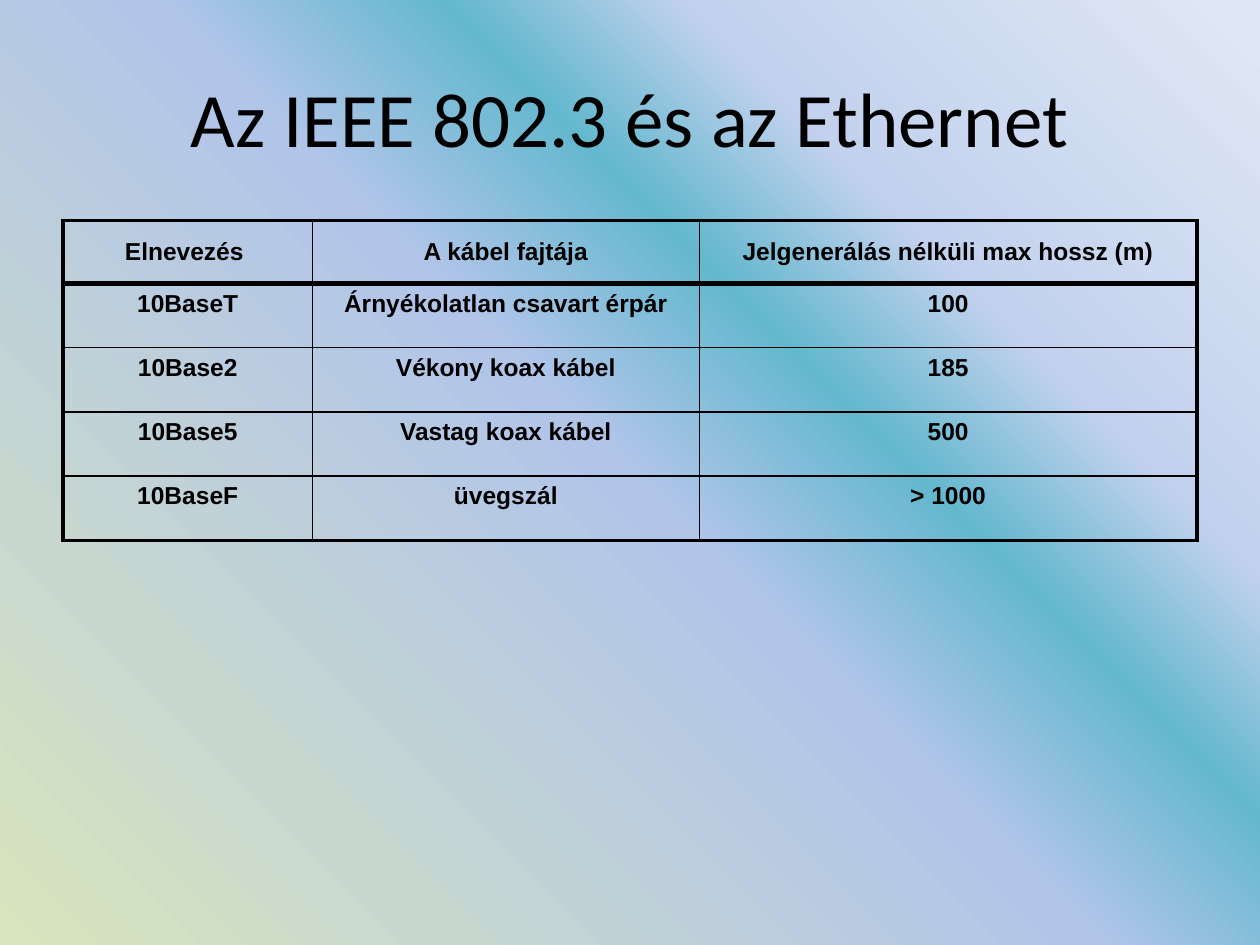
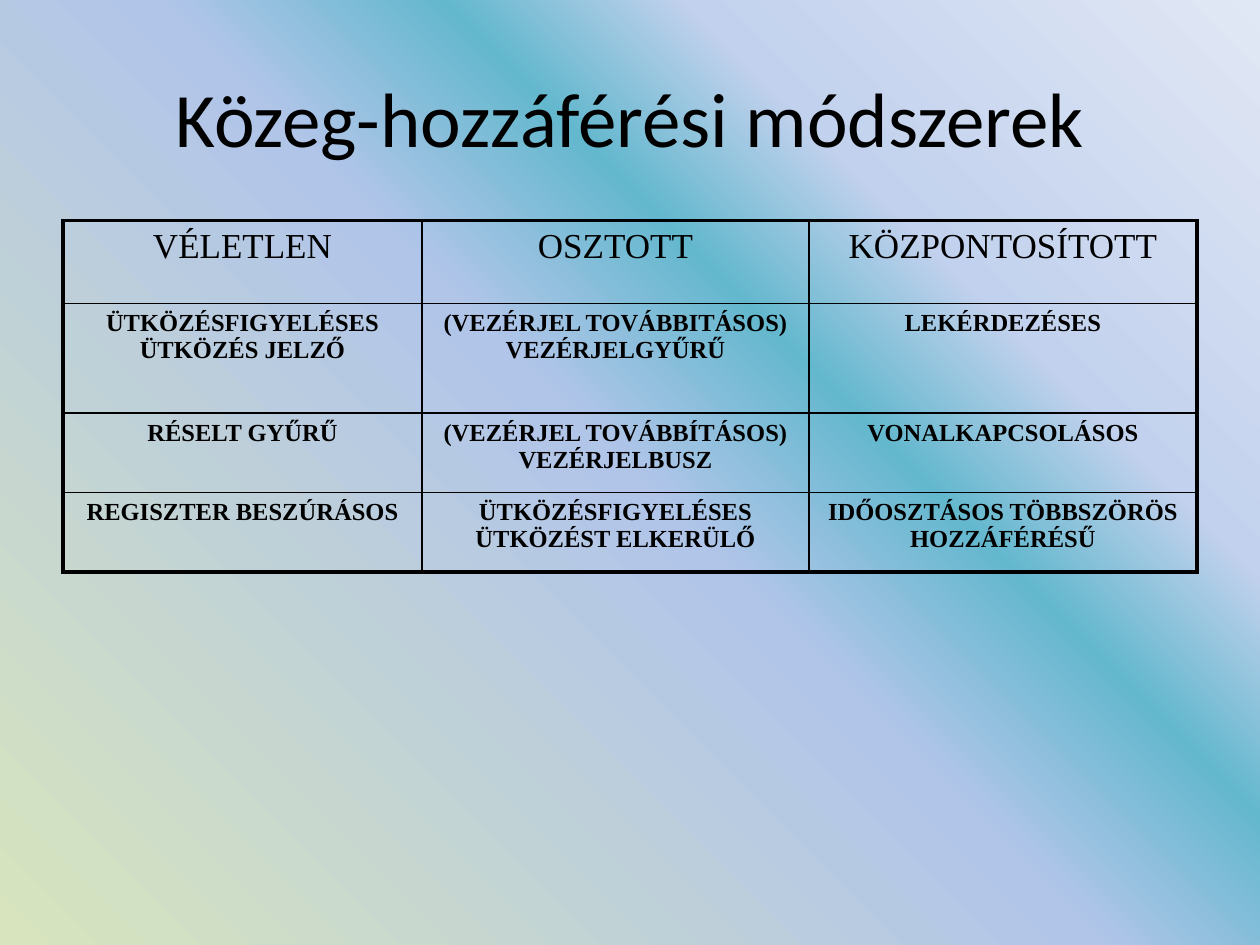
"""Builds two slides with tables on Ethernet cabling and media access methods."""
from lxml import etree
from pptx import Presentation
from pptx import util as u
from pptx.dml.color import RGBColor
from pptx.enum import text
from pptx.oxml import ns, parse_xml

COLORS = {
    "ink": "000000",
    "brick": "953735",
    "lime": "D7E4BD",
    "periwinkle": "B1C5E9",
    "teal": "64B8CE",
    "mist": "C2D1ED",
    "pale": "E1E8F5",
}
GRADIENT_STOPS = [
    (0, "brick", 100), (0, "lime", 100), (50, "periwinkle", 100),
    (63, "teal", 38), (74, "mist", 100), (100, "pale", 100),
]
TITLE_FONT = "Calibri"
THIN, THICK, HEADER_RULE = 1, 2.25, 3

CABLE_ROWS = [
    ["Elnevezés ", "A kábel fajtája", "Jelgenerálás nélküli max hossz (m)"],
    ["10BaseT", "Árnyékolatlan csavart érpár", "100"],
    ["10Base2", "Vékony koax kábel", "185"],
    ["10Base5", "Vastag koax kábel", "500"],
    ["10BaseF", "üvegszál", "> 1000"],
]
ACCESS_ROWS = [
    ["VÉLETLEN", "OSZTOTT", "KÖZPONTOSÍTOTT"],
    ["ÜTKÖZÉSFIGYELÉSES ÜTKÖZÉS JELZŐ",
     "(VEZÉRJEL TOVÁBBITÁSOS) VEZÉRJELGYŰRŰ", "LEKÉRDEZÉSES"],
    ["RÉSELT GYŰRŰ",
     "(VEZÉRJEL TOVÁBBÍTÁSOS) VEZÉRJELBUSZ", "VONALKAPCSOLÁSOS"],
    ["REGISZTER BESZÚRÁSOS",
     "ÜTKÖZÉSFIGYELÉSES ÜTKÖZÉST ELKERÜLŐ",
     "IDŐOSZTÁSOS TÖBBSZÖRÖS HOZZÁFÉRÉSŰ"],
]


def paint_background(master):
    """Give the master a gradient that spreads from the bottom left corner."""
    master.background.fill.solid()
    properties = master.element.find(".//" + ns.qn("p:bgPr"))
    stops = "".join(
        f'<a:gs pos="{position * 1000}"><a:srgbClr val="{COLORS[name]}">'
        f'<a:alpha val="{opacity * 1000}"/></a:srgbClr></a:gs>'
        for position, name, opacity in GRADIENT_STOPS)
    gradient = parse_xml(
        f'<a:gradFill {ns.nsdecls("a")} rotWithShape="1"><a:gsLst>{stops}</a:gsLst>'
        '<a:path path="circle"><a:fillToRect t="100000" r="100000"/></a:path>'
        '</a:gradFill>')
    properties.replace(properties.find(ns.qn("a:solidFill")), gradient)


def format_text(frame, font, size, bold=False):
    """Centre the paragraphs of a frame and style their runs."""
    for para in frame.paragraphs:
        para.alignment = text.PP_ALIGN.CENTER
        for span in para.runs:
            span.font.name = font
            span.font.size = u.Pt(size)
            span.font.bold = bold
            span.font.color.rgb = RGBColor.from_string(COLORS["ink"])


def add_titled_slide(deck, title):
    """Add a title-only slide and return it."""
    page = deck.slides.add_slide(deck.slide_layouts[5])
    box = page.shapes.title
    box.left, box.top = u.Inches(0.5), u.Inches(0.3)
    box.width, box.height = u.Inches(9), u.Inches(1.25)
    box.text_frame.text = title
    box.text_frame.vertical_anchor = text.MSO_ANCHOR.MIDDLE
    format_text(box.text_frame, TITLE_FONT, 44)
    return page


def set_borders(cell, widths):
    """Draw the left, right, top and bottom borders at widths in points."""
    properties = cell._tc.get_or_add_tcPr()
    for index, (side, width) in enumerate(zip("LRTB", widths)):
        line = etree.Element(ns.qn(f"a:ln{side}"), w=str(u.Pt(width)))
        fill = etree.SubElement(line, ns.qn("a:solidFill"))
        etree.SubElement(fill, ns.qn("a:srgbClr"), val=COLORS["ink"])
        properties.insert(index, line)


def add_framed_table(page, rows, column_widths, row_heights, font,
                     header_size, header_bold, header_anchor, header_rule):
    """Add a see-through table with a thick frame and thin inner lines."""
    table = page.shapes.add_table(
        len(rows), len(column_widths), u.Inches(0.5), u.Inches(1.75),
        u.Inches(sum(column_widths)), u.Inches(sum(row_heights))).table
    table.first_row = table.horz_banding = False
    for column, width in zip(table.columns, column_widths):
        column.width = u.Inches(width)
    for row, height in zip(table.rows, row_heights):
        row.height = u.Inches(height)

    column_lines = [THICK] + [THIN] * (len(column_widths) - 1) + [THICK]
    row_lines = [THICK, header_rule] + [THIN] * (len(rows) - 2) + [THICK]
    for r, labels in enumerate(rows):
        for c, label in enumerate(labels):
            cell = table.cell(r, c)
            cell.text_frame.text = label
            cell.fill.background()
            set_borders(cell, column_lines[c:c + 2] + row_lines[r:r + 2])
            if r == 0:
                cell.vertical_anchor = header_anchor
                format_text(cell.text_frame, font, header_size, header_bold)
            else:
                cell.vertical_anchor = text.MSO_ANCHOR.TOP
                format_text(cell.text_frame, font, 14, True)


def main():
    """Build and save the deck."""
    deck = Presentation()
    deck.slide_width, deck.slide_height = u.Inches(10), u.Inches(7.5)
    paint_background(deck.slide_master)

    page = add_titled_slide(deck, "Az IEEE 802.3 és az Ethernet")
    add_framed_table(page, CABLE_ROWS, [1.98, 3.07, 3.95], [0.5] + [0.51] * 4,
                     "Arial", header_size=14, header_bold=True,
                     header_anchor=text.MSO_ANCHOR.MIDDLE,
                     header_rule=HEADER_RULE)

    page = add_titled_slide(deck, "Közeg-hozzáférési módszerek")
    add_framed_table(page, ACCESS_ROWS, [2.85, 3.07, 3.08],
                     [0.66, 0.87, 0.63, 0.63],
                     "Times New Roman", header_size=20, header_bold=False,
                     header_anchor=text.MSO_ANCHOR.TOP, header_rule=THIN)

    deck.save("out.pptx")


if __name__ == "__main__":
    main()
